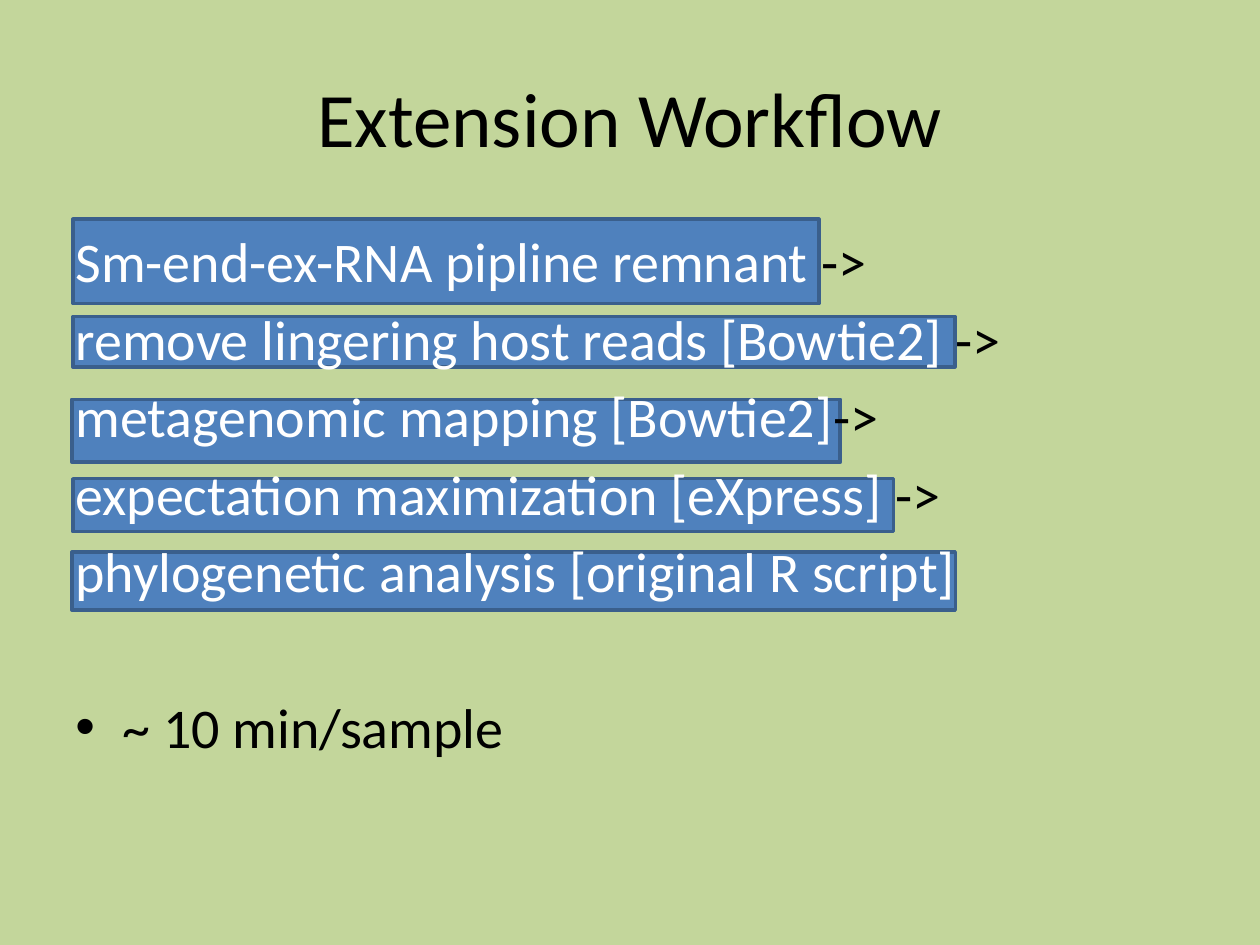
from dataclasses import dataclass

from lxml.etree import SubElement
from pptx import Presentation
from pptx.dml.color import RGBColor
from pptx.enum.shapes import MSO_SHAPE
from pptx.enum.text import MSO_ANCHOR, PP_ALIGN
from pptx.oxml.ns import qn
from pptx.util import Cm, Pt


@dataclass(frozen=True)
class Theme:
    """Colours and type sizes of the slide."""
    background: RGBColor = RGBColor(0xC3, 0xD6, 0x9B)
    bar: RGBColor = RGBColor(0x4F, 0x81, 0xBD)
    bar_edge: RGBColor = RGBColor(0x3A, 0x5F, 0x8C)
    ink: RGBColor = RGBColor(0, 0, 0)
    step_ink: RGBColor = RGBColor(0xFF, 0xFF, 0xFF)
    font: str = "Calibri"
    title_size: Pt = Pt(44)
    body_size: Pt = Pt(32)
    step_gap: Pt = Pt(5.8)
    note_gap: Pt = Pt(50.7)


THEME = Theme()
ARROW = "->"
STEPS = [
    ("Sm-end-ex-RNA pipline remnant ", (1.47, 4.42, 15.04, 1.7)),
    ("remove lingering host reads [Bowtie2] ", (1.47, 6.38, 17.78, 1.02)),
    ("metagenomic mapping [Bowtie2]", (1.45, 8.05, 15.49, 1.27)),
    ("expectation maximization [eXpress] ", (1.47, 9.65, 16.54, 1.07)),
    ("phylogenetic analysis [original R script]", (1.45, 11.13, 17.81, 1.17)),
]


def add_bar(slide, bounds):
    """Draw the bar behind one workflow step."""
    bar = slide.shapes.add_shape(MSO_SHAPE.RECTANGLE, *map(Cm, bounds))
    bar.shadow.inherit = False
    bar.fill.solid()
    bar.fill.fore_color.rgb = THEME.bar
    bar.line.color.rgb = THEME.bar_edge
    bar.line.width = Pt(2)


def add_frame(slide, bounds, anchor):
    """Add a wrapping text box and return its text frame."""
    frame = slide.shapes.add_textbox(*map(Cm, bounds)).text_frame
    frame.word_wrap = True
    frame.vertical_anchor = anchor
    return frame


def style_run(run, size, color):
    """Give a run its font, size and colour."""
    run.font.name = THEME.font
    run.font.size = size
    run.font.color.rgb = color


def add_bullet(paragraph):
    """Give a paragraph a hanging round bullet."""
    properties = paragraph._p.get_or_add_pPr()
    properties.set("marL", str(Cm(0.95)))
    properties.set("indent", str(Cm(-0.95)))
    SubElement(properties, qn("a:buFont"), typeface="Arial")
    SubElement(properties, qn("a:buChar"), char="•")


def add_title(slide, title):
    """Add the centred slide title."""
    frame = add_frame(slide, (1.27, 0.76, 22.86, 3.18), MSO_ANCHOR.MIDDLE)
    frame.text = title
    heading = frame.paragraphs[0]
    heading.alignment = PP_ALIGN.CENTER
    style_run(heading.runs[0], THEME.title_size, THEME.ink)


def add_workflow(slide, steps, duration):
    """Add the steps, joined by arrows, and the bulleted duration."""
    frame = add_frame(slide, (1.27, 4.45, 22.86, 12.57), MSO_ANCHOR.TOP)
    frame.text = "\n".join([*steps, duration])
    *step_lines, duration_line = frame.paragraphs
    for step_line in step_lines:
        style_run(step_line.runs[0], THEME.body_size, THEME.step_ink)
    for step_line in step_lines[1:]:
        step_line.space_before = THEME.step_gap
    for step_line in step_lines[:-1]:
        arrow = step_line.add_run()
        arrow.text = ARROW
        style_run(arrow, THEME.body_size, THEME.ink)
    add_bullet(duration_line)
    duration_line.space_before = THEME.note_gap
    style_run(duration_line.runs[0], THEME.body_size, THEME.ink)


def main():
    """Build and save the slide."""
    deck = Presentation()
    deck.slide_width, deck.slide_height = Cm(25.4), Cm(19.05)
    slide = deck.slides.add_slide(deck.slide_layouts[6])
    slide.background.fill.solid()
    slide.background.fill.fore_color.rgb = THEME.background
    for _, bounds in reversed(STEPS):
        add_bar(slide, bounds)
    add_title(slide, "Extension Workflow")
    add_workflow(slide, [step for step, _ in STEPS], "~ 10 min/sample")
    deck.save("out.pptx")


if __name__ == "__main__":
    main()
